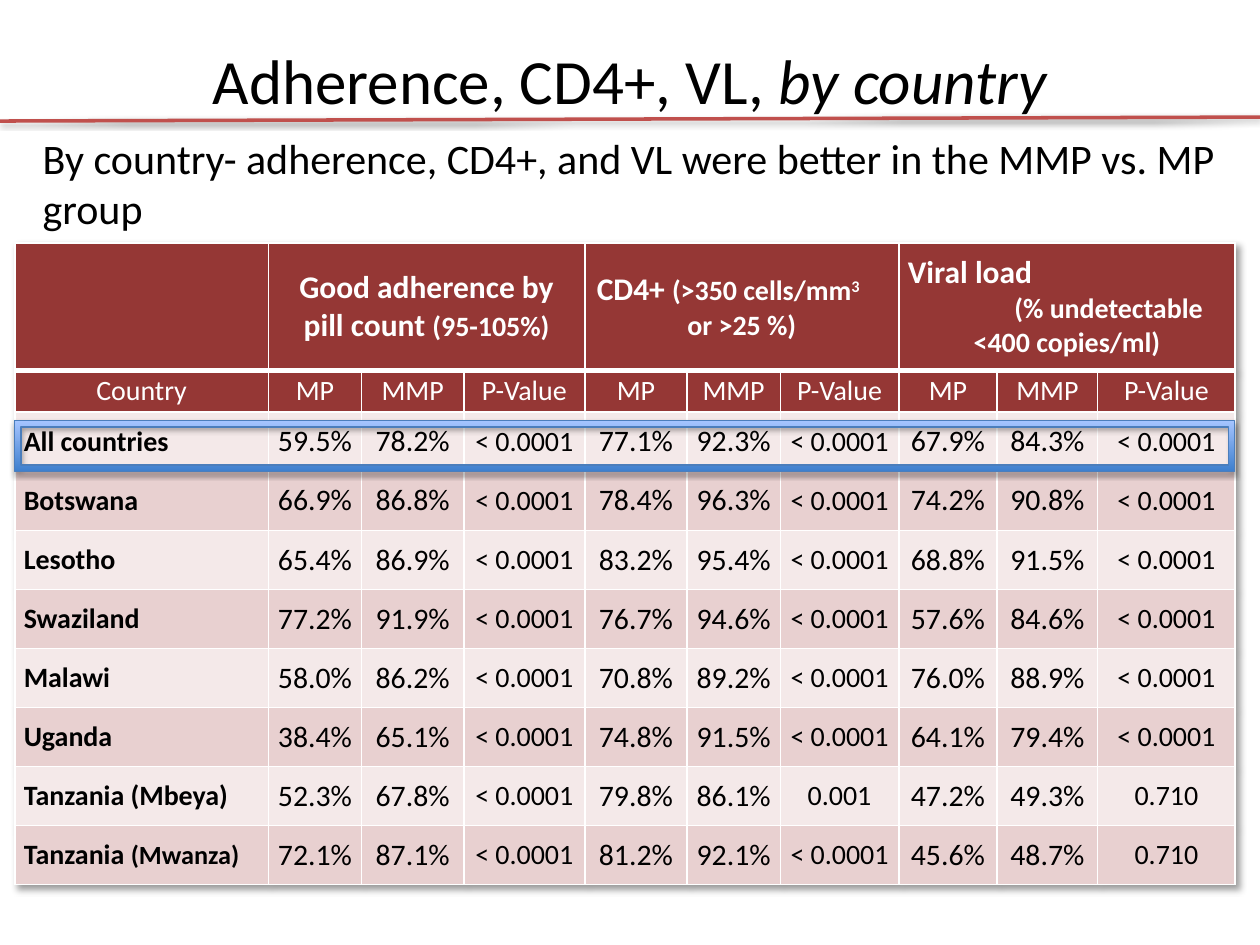
from typing import NamedTuple, Optional

import pptx
import pptx.dml.color
import pptx.enum.dml
import pptx.enum.shapes
import pptx.enum.text
import pptx.oxml
import pptx.oxml.ns
import pptx.util

Cm = pptx.util.Cm
Pt = pptx.util.Pt
RGBColor = pptx.dml.color.RGBColor
Align = pptx.enum.text.PP_ALIGN
Anchor = pptx.enum.text.MSO_ANCHOR

FONT = "Calibri"
BLACK = RGBColor(0x00, 0x00, 0x00)
WHITE = RGBColor(0xFF, 0xFF, 0xFF)
HEADER_RED = RGBColor(0x95, 0x37, 0x35)
BAND_LIGHT = RGBColor(0xF4, 0xE9, 0xE9)
BAND_DARK = RGBColor(0xE8, 0xD0, 0xD0)
RULE_RED = RGBColor(0xC0, 0x50, 0x4D)
FRAME_LINE = RGBColor(0x4B, 0x7E, 0xBC)
FRAME_DARK = RGBColor(0x3F, 0x80, 0xCE)
FRAME_LIGHT = RGBColor(0xA4, 0xC4, 0xFF)

COLUMN_WIDTHS = (5.11, 1.88, 2.06, 2.44, 2.06, 1.88, 2.39, 1.98, 2.03, 2.77)
ROW_HEIGHTS = (2.57, 0.84) + (1.19,) * 8
LOW = "< 0.0001"


class Span(NamedTuple):
    text: str
    size: float
    bold: bool = False
    italic: bool = False
    superscript: bool = False


class Line(NamedTuple):
    spans: tuple[Span, ...]
    align: Align = Align.CENTER
    indent: float = 0


class Country(NamedTuple):
    name: str
    adherence: tuple[str, str, str]
    cd4: tuple[str, str, str]
    viral_load: tuple[str, str, str]
    region: Optional[str] = None


GROUP_HEADERS = (
    (Line((Span("Good adherence by pill count ", 18, True), Span("(95-105%)", 16, True))),),
    (
        Line((Span("CD4+ ", 18, True), Span("(>350 cells/mm", 16, True),
              Span("3", 16, True, superscript=True)), Align.LEFT, 0.06),
        Line((Span("or >25 %)", 16, True),)),
    ),
    (
        Line((Span("Viral load", 18, True),), Align.LEFT),
        Line((Span("(% undetectable", 16, True),), Align.LEFT, 2.15),
        Line((Span("<400 copies/ml)", 16, True),)),
    ),
)

COUNTRIES = (
    Country("All countries", ("59.5%", "78.2%", LOW), ("77.1%", "92.3%", LOW), ("67.9%", "84.3%", LOW)),
    Country("Botswana", ("66.9%", "86.8%", LOW), ("78.4%", "96.3%", LOW), ("74.2%", "90.8%", LOW)),
    Country("Lesotho", ("65.4%", "86.9%", LOW), ("83.2%", "95.4%", LOW), ("68.8%", "91.5%", LOW)),
    Country("Swaziland", ("77.2%", "91.9%", LOW), ("76.7%", "94.6%", LOW), ("57.6%", "84.6%", LOW)),
    Country("Malawi", ("58.0%", "86.2%", LOW), ("70.8%", "89.2%", LOW), ("76.0%", "88.9%", LOW)),
    Country("Uganda", ("38.4%", "65.1%", LOW), ("74.8%", "91.5%", LOW), ("64.1%", "79.4%", LOW)),
    Country("Tanzania (Mbeya)", ("52.3%", "67.8%", LOW), ("79.8%", "86.1%", "0.001"),
            ("47.2%", "49.3%", "0.710")),
    Country("Tanzania ", ("72.1%", "87.1%", LOW), ("81.2%", "92.1%", LOW),
            ("45.6%", "48.7%", "0.710"), "(Mwanza)"),
)


def write_lines(frame, lines: tuple[Line, ...], color: RGBColor) -> None:
    for index, line in enumerate(lines):
        para = frame.paragraphs[0] if index == 0 else frame.add_paragraph()
        para.alignment = line.align
        if line.indent:
            para._p.get_or_add_pPr().set("marL", str(Cm(line.indent)))
        for span in line.spans:
            run = para.add_run()
            run.text = span.text
            run.font.name = FONT
            run.font.size = Pt(span.size)
            run.font.bold = span.bold
            run.font.italic = span.italic
            run.font.color.rgb = color
            if span.superscript:
                run.font._element.set("baseline", "30000")


def add_text(page, left: float, top: float, width: float, height: float,
             line: Line, anchor: Anchor) -> None:
    box = page.shapes.add_textbox(Cm(left), Cm(top), Cm(width), Cm(height))
    box.text_frame.word_wrap = True
    box.text_frame.vertical_anchor = anchor
    write_lines(box.text_frame, (line,), BLACK)


def add_shadow(properties, blur: float, distance: float, degrees: int, opacity: int) -> None:
    for old in properties.findall(pptx.oxml.ns.qn("a:effectLst")):
        properties.remove(old)
    properties.append(pptx.oxml.parse_xml(
        f'<a:effectLst {pptx.oxml.ns.nsdecls("a")}>'
        f'<a:outerShdw blurRad="{Pt(blur)}" dist="{Pt(distance)}" dir="{degrees * 60000}" rotWithShape="0">'
        f'<a:srgbClr val="{BLACK}"><a:alpha val="{opacity * 1000}"/></a:srgbClr>'
        '</a:outerShdw></a:effectLst>'))


def style_cell(cell, fill: RGBColor, top: float = 1, bottom: float = 1) -> None:
    """Set the margins, white borders and fill of a table cell."""
    cell.margin_left = cell.margin_right = Cm(0.18)
    cell.margin_top = cell.margin_bottom = 0
    cell.vertical_anchor = Anchor.MIDDLE
    properties = cell._tc.get_or_add_tcPr()
    for side, width in (("L", 1), ("R", 1), ("T", top), ("B", bottom)):
        properties.append(pptx.oxml.parse_xml(
            f'<a:ln{side} {pptx.oxml.ns.nsdecls("a")} w="{Pt(width)}">'
            f'<a:solidFill><a:srgbClr val="{WHITE}"/></a:solidFill></a:ln{side}>'))
    cell.fill.solid()
    cell.fill.fore_color.rgb = fill


def add_country_table(page) -> None:
    table = page.shapes.add_table(
        len(ROW_HEIGHTS), len(COLUMN_WIDTHS), Cm(0.3), Cm(4.9),
        Cm(sum(COLUMN_WIDTHS)), Cm(sum(ROW_HEIGHTS))).table
    for column, width in zip(table.columns, COLUMN_WIDTHS):
        column.width = Cm(width)
    for row, height in zip(table.rows, ROW_HEIGHTS):
        row.height = Cm(height)

    for column in range(len(COLUMN_WIDTHS)):
        style_cell(table.cell(0, column), HEADER_RED, bottom=3)
        style_cell(table.cell(1, column), HEADER_RED, top=3)
    for group, lines in enumerate(GROUP_HEADERS):
        first = 1 + 3 * group
        table.cell(0, first).merge(table.cell(0, first + 2))
        write_lines(table.cell(0, first).text_frame, lines, WHITE)
    for column, label in enumerate(("Country",) + ("MP", "MMP", "P-Value") * 3):
        write_lines(table.cell(1, column).text_frame, (Line((Span(label, 16),)),), WHITE)

    for index, country in enumerate(COUNTRIES):
        row = index + 2
        spans = (Span(country.name, 16, True),)
        if country.region:
            spans += (Span(country.region, 15, True),)
        lines = [Line(spans, Align.LEFT)]
        for group in (country.adherence, country.cd4, country.viral_load):
            lines += [Line((Span(value, size),)) for value, size in zip(group, (17, 17, 16))]
        for column, line in enumerate(lines):
            cell = table.cell(row, column)
            style_cell(cell, BAND_DARK if index % 2 else BAND_LIGHT)
            write_lines(cell.text_frame, (line,), BLACK)
    add_shadow(table._tbl.tblPr, 4, 3, 45, 40)
    style_id = table._tbl.tblPr.find(pptx.oxml.ns.qn("a:tableStyleId"))
    table._tbl.tblPr.append(style_id)


def add_title_rule(page) -> None:
    rule = page.shapes.add_connector(
        pptx.enum.shapes.MSO_CONNECTOR.STRAIGHT, 0, Cm(2.44), Cm(25.4), Cm(2.36))
    rule.line.color.rgb = RULE_RED
    rule.line.width = Pt(2)
    add_shadow(rule._element.spPr, 3.1, 1.6, 90, 38)


def add_highlight(page) -> None:
    highlight = page.shapes.add_shape(
        pptx.enum.shapes.MSO_SHAPE.FRAME, Cm(0.3), Cm(8.48), Cm(24.59), Cm(1.02))
    highlight.fill.gradient()
    highlight.fill.gradient_angle = 90
    for stop, color in zip(highlight.fill.gradient_stops, (FRAME_DARK, FRAME_LIGHT)):
        stop.color.rgb = color
    highlight.line.color.rgb = FRAME_LINE
    highlight.line.width = Pt(0.75)
    add_shadow(highlight._element.spPr, 3.1, 1.8, 90, 35)


def main() -> None:
    deck = pptx.Presentation()
    deck.slide_width, deck.slide_height = Cm(25.4), Cm(19.05)
    page = deck.slides.add_slide(deck.slide_layouts[6])
    title = Line((Span("Adherence, CD4+, VL, ", 36), Span("by country", 36, italic=True)))
    add_text(page, 0.3, 0, 24.79, 3.18, title, Anchor.MIDDLE)
    add_title_rule(page)
    add_country_table(page)
    summary = "By country- adherence, CD4+, and VL were better in the MMP vs. MP group"
    add_text(page, 0.61, 2.54, 24.79, 2.39, Line((Span(summary, 24),), Align.LEFT), Anchor.TOP)
    add_highlight(page)
    deck.save("out.pptx")


if __name__ == "__main__":
    main()
